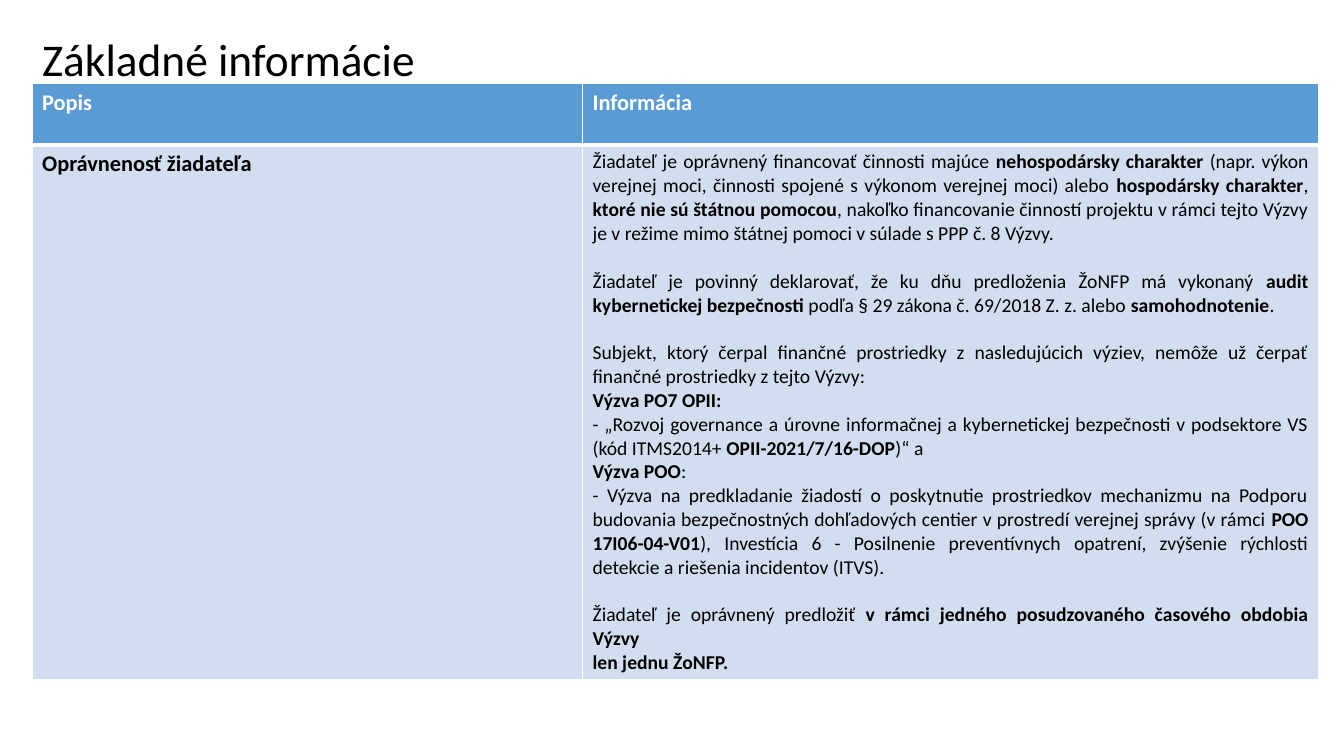
from dataclasses import dataclass

from lxml import etree
from pptx import Presentation
from pptx.dml.color import RGBColor
from pptx.enum import text
from pptx.oxml import ns
from pptx.util import Cm, Pt


@dataclass(frozen=True)
class Theme:
    font: str = "Calibri"
    black: str = "000000"
    white: str = "FFFFFF"
    header_fill: str = "5B9BD5"
    body_fill: str = "D2DEEF"
    title_size: float = 32.4
    label_size: float = 16
    detail_size: float = 14
    section_gap: float = 17


LEFT = 0.81
COLUMN_WIDTHS = (13.87, 18.55)
HEADER_HEIGHT, BODY_HEIGHT = 1.55, 13.46
THIN, THICK = 1, 3

# Each section is a list of paragraphs; each paragraph is a list of (words, bold).
ELIGIBILITY = [
    [
        [("Žiadateľ je oprávnený financovať činnosti majúce ", False),
         ("nehospodársky charakter ", True),
         ("(napr. výkon verejnej moci, činnosti spojené s výkonom verejnej moci) alebo ", False),
         ("hospodársky charakter", True),
         (", ", False),
         ("ktoré nie sú štátnou pomocou", True),
         (", nakoľko financovanie činností projektu v rámci tejto Výzvy je v režime "
          "mimo štátnej pomoci v súlade s PPP č. 8 Výzvy.", False)],
    ],
    [
        [("Žiadateľ je povinný deklarovať, že ku dňu predloženia ŽoNFP má vykonaný ", False),
         ("audit kybernetickej bezpečnosti ", True),
         ("podľa § 29 zákona č. 69/2018 Z. z. alebo ", False),
         ("samohodnotenie", True),
         (".", False)],
    ],
    [
        [("Subjekt, ktorý čerpal finančné prostriedky z nasledujúcich výziev, nemôže už "
          "čerpať finančné prostriedky z tejto Výzvy:", False)],
        [("Výzva PO7 OPII:", True)],
        [("- „Rozvoj governance a úrovne informačnej a kybernetickej bezpečnosti "
          "v podsektore VS (kód ITMS2014+ ", False),
         ("OPII-2021/7/16-DOP", True),
         (")“ a ", False)],
        [("Výzva POO", True), (":", False)],
        [("- Výzva na predkladanie žiadostí o poskytnutie prostriedkov mechanizmu na Podporu "
          "budovania bezpečnostných dohľadových centier v prostredí verejnej správy "
          "(v rámci ", False),
         ("POO 17I06-04-V01", True),
         ("), Investícia 6 - Posilnenie preventívnych opatrení, zvýšenie rýchlosti "
          "detekcie a riešenia incidentov (ITVS).", False)],
    ],
    [
        [("Žiadateľ je oprávnený predložiť ", False),
         ("v rámci jedného posudzovaného časového obdobia Výzvy ", True)],
        [("len jednu ŽoNFP.", True)],
    ],
]


class SlideBuilder:
    def __init__(self, presentation, theme):
        self.theme = theme
        self.slide = presentation.slides.add_slide(presentation.slide_layouts[5])

    def add_run(self, paragraph, words, size, color, bold=False):
        run = paragraph.add_run()
        run.text = words
        font = run.font
        font.name, font.size, font.bold = self.theme.font, Pt(size), bold
        font.color.rgb = RGBColor.from_string(color)

    def add_title(self, words):
        title = self.slide.shapes.title
        title.left, title.top, title.width, title.height = Cm(LEFT), Cm(0.9), Cm(25.4), Cm(1.3)
        frame = title.text_frame
        frame.auto_size = text.MSO_AUTO_SIZE.NONE
        frame.vertical_anchor = text.MSO_ANCHOR.MIDDLE
        frame.margin_top = frame.margin_bottom = 0
        paragraph = frame.paragraphs[0]
        paragraph.alignment = text.PP_ALIGN.LEFT
        paragraph.line_spacing = 0.9
        self.add_run(paragraph, words, self.theme.title_size, self.theme.black)

    def add_table(self, column_widths, row_heights):
        table = self.slide.shapes.add_table(
            len(row_heights), len(column_widths), Cm(LEFT), Cm(2.11),
            Cm(sum(column_widths)), Cm(sum(row_heights))).table
        table.horz_banding = False
        for column, width in zip(table.columns, column_widths):
            column.width = Cm(width)
        for row, height in zip(table.rows, row_heights):
            row.height = Cm(height)
        return table

    def format_cell(self, cell, fill, bottom_width=THIN):
        properties = cell._tc.get_or_add_tcPr()
        for side, width in zip("LRTB", (THIN, THIN, THIN, bottom_width)):
            border = etree.SubElement(properties, ns.qn(f"a:ln{side}"), w=str(Pt(width)))
            solid = etree.SubElement(border, ns.qn("a:solidFill"))
            etree.SubElement(solid, ns.qn("a:srgbClr"), val=self.theme.white)
        cell.fill.solid()
        cell.fill.fore_color.rgb = RGBColor.from_string(fill)

    def add_label(self, cell, words, color):
        self.add_run(cell.text_frame.paragraphs[0], words, self.theme.label_size, color, bold=True)

    def add_sections(self, cell, sections):
        """Write justified paragraphs with a gap between sections."""
        frame = cell.text_frame
        paragraph = frame.paragraphs[0]
        for section_index, section in enumerate(sections):
            for index, pieces in enumerate(section):
                if section_index or index:
                    paragraph = frame.add_paragraph()
                if section_index and index == 0:
                    paragraph.space_before = Pt(self.theme.section_gap)
                paragraph.alignment = text.PP_ALIGN.JUSTIFY
                for words, bold in pieces:
                    self.add_run(paragraph, words, self.theme.detail_size, self.theme.black, bold)


def main():
    presentation = Presentation()
    presentation.slide_width, presentation.slide_height = Cm(33.87), Cm(19.05)
    theme = Theme()
    builder = SlideBuilder(presentation, theme)
    builder.add_title("Základné informácie")

    table = builder.add_table(COLUMN_WIDTHS, (HEADER_HEIGHT, BODY_HEIGHT))
    for column, heading in enumerate(("Popis", "Informácia")):
        header_cell = table.cell(0, column)
        builder.format_cell(header_cell, theme.header_fill, THICK)
        builder.add_label(header_cell, heading, theme.white)
        builder.format_cell(table.cell(1, column), theme.body_fill)
    builder.add_label(table.cell(1, 0), "Oprávnenosť žiadateľa", theme.black)
    builder.add_sections(table.cell(1, 1), ELIGIBILITY)

    presentation.save("out.pptx")


if __name__ == "__main__":
    main()
